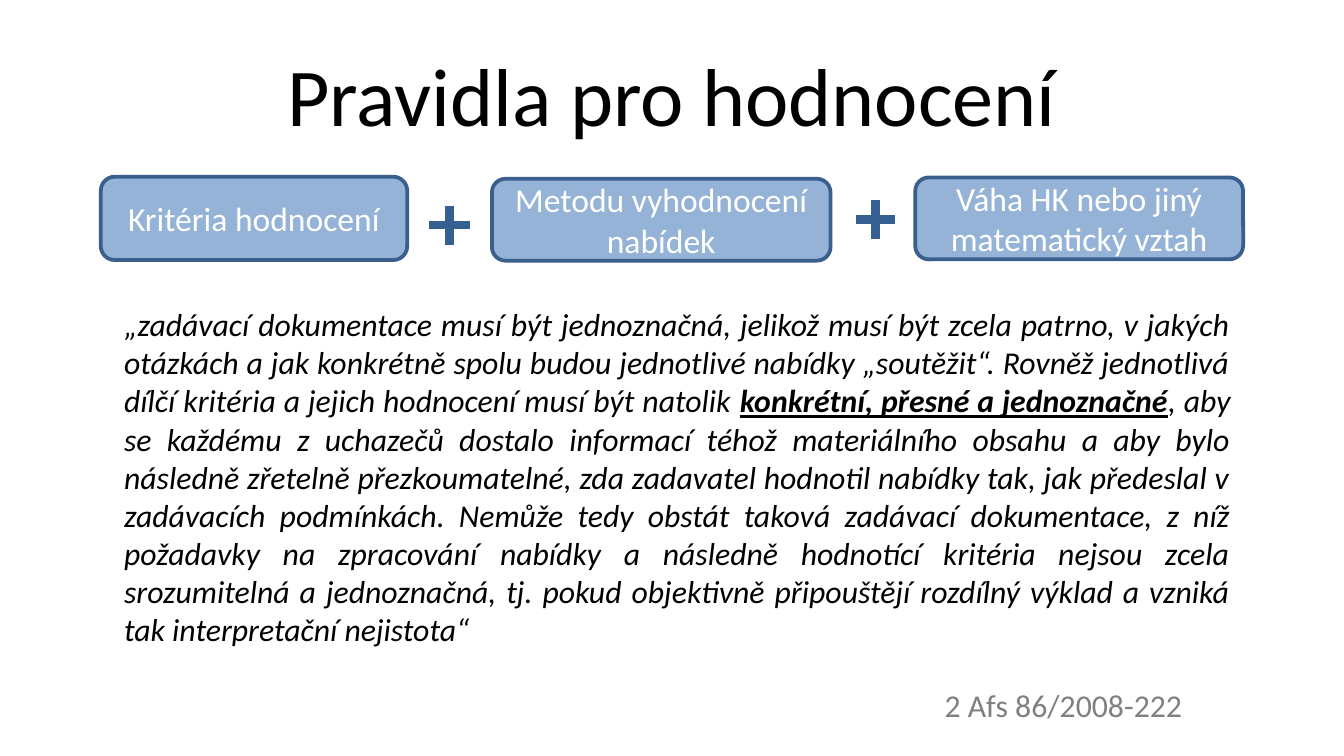
from lxml import etree
from pptx import Presentation
from pptx import util as u
from pptx.dml.color import RGBColor
from pptx.enum import shapes, text
from pptx.oxml.ns import qn

THEME = {
    "font": "Calibri",
    "black": "000000", "white": "FFFFFF", "gray": "808080",
    "fill": "95B3D7", "edge": "3A5F8C", "plus": "376092",
    "title": 44, "box": 18, "quote": 17,
}
PX = 4572


def color(name):
    return RGBColor.from_string(THEME[name])


def add_run(para, words, size, tint, **style):
    run = para.add_run()
    run.text = words
    font = run.font
    font.name = THEME["font"]
    font.size = u.Pt(THEME[size])
    font.color.rgb = color(tint)
    for key, value in style.items():
        setattr(font, key, value)


deck = Presentation()
deck.slide_width, deck.slide_height = 2000 * PX, 1125 * PX
slide = deck.slides.add_slide(deck.slide_layouts[5])

title = slide.shapes.title
title.left, title.top, title.width, title.height = 100 * PX, 45 * PX, 1800 * PX, 188 * PX
title.text_frame.vertical_anchor = text.MSO_ANCHOR.MIDDLE
para = title.text_frame.paragraphs[0]
para.alignment = text.PP_ALIGN.CENTER
add_run(para, "Pravidla pro hodnocení", "title", "black")

boxes = [
    ("Kritéria hodnocení", 150, 263, 456, 124),
    ("Váha HK nebo jiný matematický vztah", 1362, 264, 488, 122),
    ("Metodu vyhodnocení nabídek", 732, 266, 504, 122),
]
for label, left, top, width, height in boxes:
    box = slide.shapes.add_shape(
        shapes.MSO_SHAPE.ROUNDED_RECTANGLE, left * PX, top * PX, width * PX, height * PX)
    box.shadow.inherit = False
    box.fill.solid()
    box.fill.fore_color.rgb = color("fill")
    box.line.color.rgb = color("edge")
    box.line.width = u.Pt(2)
    frame = box.text_frame
    frame.word_wrap = True
    frame.vertical_anchor = text.MSO_ANCHOR.MIDDLE
    para = frame.paragraphs[0]
    para.alignment = text.PP_ALIGN.CENTER
    para.space_before = u.Pt(4)
    add_run(para, label, "box", "white")

RISE = 29
for x, y, reach in [(669, 335, 31), (1303, 327, 29)]:
    for dx, dy in [(0, RISE), (reach, 0)]:
        bar = slide.shapes.add_connector(
            shapes.MSO_CONNECTOR.STRAIGHT,
            (x - dx) * PX, (y - dy) * PX, (x + dx) * PX, (y + dy) * PX)
        bar.line.color.rgb = color("plus")
        bar.line.width = u.Pt(4.5)
        etree.SubElement(bar.element.spPr, qn("a:effectLst"))

quote = slide.shapes.add_textbox(165 * PX, 444 * PX, 1686 * PX, 650 * PX)
frame = quote.text_frame
frame.word_wrap = True
para = frame.paragraphs[0]
para.alignment = text.PP_ALIGN.JUSTIFY
parts = [
    ("„zadávací dokumentace musí být jednoznačná, jelikož musí být zcela patrno, "
     "v jakých otázkách a jak konkrétně spolu budou jednotlivé nabídky „soutěžit“. "
     "Rovněž jednotlivá dílčí kritéria a jejich hodnocení musí být natolik ", False),
    ("konkrétní, přesné a jednoznačné", True),
    (", aby se každému z uchazečů dostalo informací téhož materiálního obsahu a aby "
     "bylo následně zřetelně přezkoumatelné, zda zadavatel hodnotil nabídky tak, jak "
     "předeslal v zadávacích podmínkách. Nemůže tedy obstát taková zadávací "
     "dokumentace, z níž požadavky na zpracování nabídky a následně hodnotící kritéria "
     "nejsou zcela srozumitelná a jednoznačná, tj. pokud objektivně připouštějí "
     "rozdílný výklad a vzniká tak interpretační nejistota“", False),
]
for words, strong in parts:
    add_run(para, words, "quote", "black", italic=True, bold=strong, underline=strong)

para = frame.add_paragraph()
para.alignment = text.PP_ALIGN.JUSTIFY
para.space_before = u.Pt(20.5)
para._p.get_or_add_pPr().set("marL", str(1221 * PX))
add_run(para, "2 Afs 86/2008-222", "quote", "gray")

deck.save("out.pptx")
